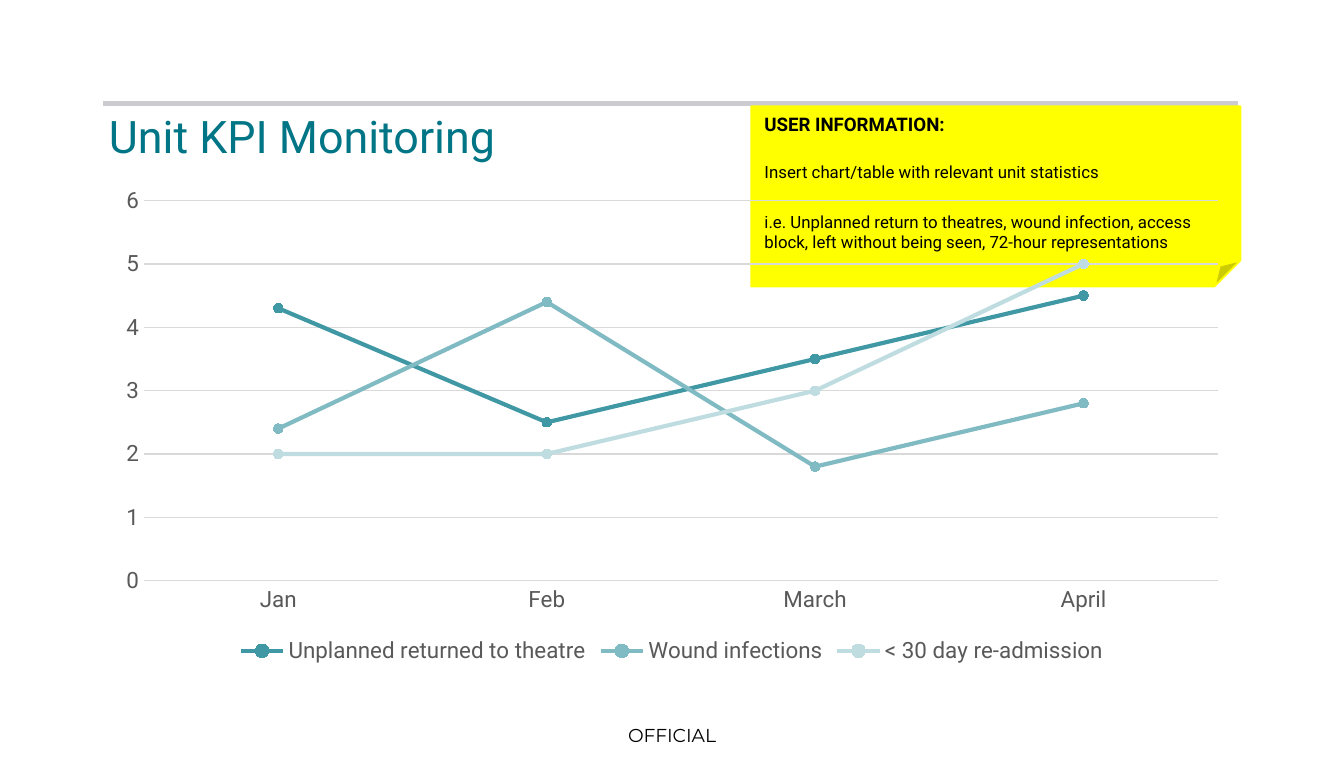
from lxml import etree
from pptx import Presentation
from pptx.chart.data import CategoryChartData
from pptx.dml.color import RGBColor
from pptx.enum.chart import XL_CHART_TYPE as ChartType, XL_LEGEND_POSITION as LegendPos
from pptx.enum.chart import XL_MARKER_STYLE as Marker, XL_TICK_MARK as Tick
from pptx.enum.shapes import MSO_CONNECTOR as Connector, MSO_SHAPE as Shape
from pptx.enum.text import MSO_ANCHOR as Anchor, PP_ALIGN as Align
from pptx.oxml.ns import qn
from pptx.util import Inches, Pt

BODY_FONT = "Roboto"
BLACK, TEAL, GREY, GRID = "000000", "007586", "595959", "D9D9D9"
RULE_GREY, YELLOW = "CCCCD0", "FFFF00"
LEFT, WIDTH = 0.77, 8.46

MONTHS = ["Jan", "Feb", "March", "April"]
KPIS = [
    ("Unplanned returned to theatre", (4.3, 2.5, 3.5, 4.5), "4098A4"),
    ("Wound infections", (2.4, 4.4, 1.8, 2.8), "80BAC3"),
    ("< 30 day re-admission", (2, 2, 3, 5), "BFDDE1"),
]


def rgb(value):
    return RGBColor.from_string(value)


def style_font(font, size, color, name=BODY_FONT, bold=False):
    font.name, font.size, font.bold = name, Pt(size), bold
    font.color.rgb = rgb(color)


def style_line(line, color, width):
    line.color.rgb = rgb(color)
    line.width = Pt(width)


def set_frame(frame, margins, anchor=Anchor.TOP):
    frame.word_wrap = True
    frame.vertical_anchor = anchor
    (frame.margin_left, frame.margin_top,
     frame.margin_right, frame.margin_bottom) = map(Inches, margins)


def write(frame, text, size, color=BLACK, font=BODY_FONT, bold=False,
          align=Align.LEFT, before=0, after=0, spacing=1.0):
    """Fill the empty first paragraph, or add a further one."""
    first = frame.paragraphs[0]
    paragraph = frame.add_paragraph() if first.runs else first
    paragraph.alignment = align
    paragraph.space_before, paragraph.space_after = Pt(before), Pt(after)
    paragraph.line_spacing = spacing
    run = paragraph.add_run()
    run.text = text
    style_font(run.font, size, color, font, bold)


def add_classification(slide, box):
    marking = slide.shapes.add_textbox(*map(Inches, box)).text_frame
    set_frame(marking, (0, 0, 0, 0), Anchor.MIDDLE)
    write(marking, "OFFICIAL", 10, font="Montserrat", align=Align.CENTER, spacing=0.98)


def add_heading(slide, box):
    left, top, width, height = box
    # Rule above the title
    rule_y = Inches(top - 0.03)
    rule = slide.shapes.add_connector(
        Connector.STRAIGHT, Inches(left), rule_y, Inches(left + width - 0.02), rule_y)
    style_line(rule.line, RULE_GREY, 3)
    etree.SubElement(rule._element.spPr, qn("a:effectLst"))
    # Title
    title = slide.shapes.add_textbox(*map(Inches, box)).text_frame
    set_frame(title, (0.04,) * 4)
    write(title, "Unit KPI Monitoring", 24, TEAL, after=6, spacing=0.95)


def add_user_note(slide, box):
    note = slide.shapes.add_shape(Shape.FOLDED_CORNER, *map(Inches, box))
    # Size of the fold, which has no entry in note.adjustments
    fold = note._element.spPr.find(qn("a:prstGeom")).find(qn("a:avLst"))
    etree.SubElement(fold, qn("a:gd"), name="adj", fmla="val 14400")
    note.shadow.inherit = False
    note.fill.solid()
    note.fill.fore_color.rgb = rgb(YELLOW)
    style_line(note.line, YELLOW, 1)
    frame = note.text_frame
    set_frame(frame, (0.1, 0.05, 0.1, 0))
    write(frame, "USER INFORMATION:", 10, bold=True, after=6)
    for advice in (
        "Insert chart/table with relevant unit statistics",
        "i.e. Unplanned return to theatres, wound infection, access block, "
        "left without being seen, 72-hour representations",
    ):
        write(frame, advice, 9, before=8, after=8)


def add_kpi_chart(slide, box):
    data = CategoryChartData()
    data.categories = MONTHS
    for name, values, _ in KPIS:
        data.add_series(name, values)
    chart = slide.shapes.add_chart(ChartType.LINE_MARKERS, *map(Inches, box), data).chart
    chart.has_title = False
    style_font(chart.font, 10, BLACK)

    # Legend
    chart.has_legend = True
    chart.legend.position = LegendPos.BOTTOM
    chart.legend.include_in_layout = False
    style_font(chart.legend.font, 12, GREY)

    # Axes
    months, scale = chart.category_axis, chart.value_axis
    for axis in (months, scale):
        axis.major_tick_mark = axis.minor_tick_mark = Tick.NONE
        style_font(axis.tick_labels.font, 12, GREY)
    style_line(months.format.line, GRID, 0.75)
    scale.minimum_scale, scale.maximum_scale, scale.major_unit = 0, 6, 1
    scale.format.line.fill.background()
    scale.has_major_gridlines = True
    style_line(scale.major_gridlines.format.line, GRID, 0.75)

    # Series
    plot = chart.plots[0]
    plot.vary_by_categories = False
    for series, (_, _, color) in zip(plot.series, KPIS):
        series.smooth = False
        style_line(series.format.line, color, 2.25)
        series.marker.style, series.marker.size = Marker.CIRCLE, 5
        dot = series.marker.format
        dot.fill.solid()
        dot.fill.fore_color.rgb = rgb(color)
        style_line(dot.line, color, 0.75)


def main():
    deck = Presentation()
    deck.slide_width, deck.slide_height = Inches(10), Inches(5.63)
    slide = deck.slides.add_slide(deck.slide_layouts[6])
    add_classification(slide, (4.49, 5.32, 1.02, 0.31))
    add_heading(slide, (LEFT, 0.8, WIDTH, 0.51))
    add_user_note(slide, (5.59, 0.79, 3.64, 1.34))
    add_kpi_chart(slide, (LEFT, 1.32, WIDTH, 3.66))
    deck.save("out.pptx")


if __name__ == "__main__":
    main()
